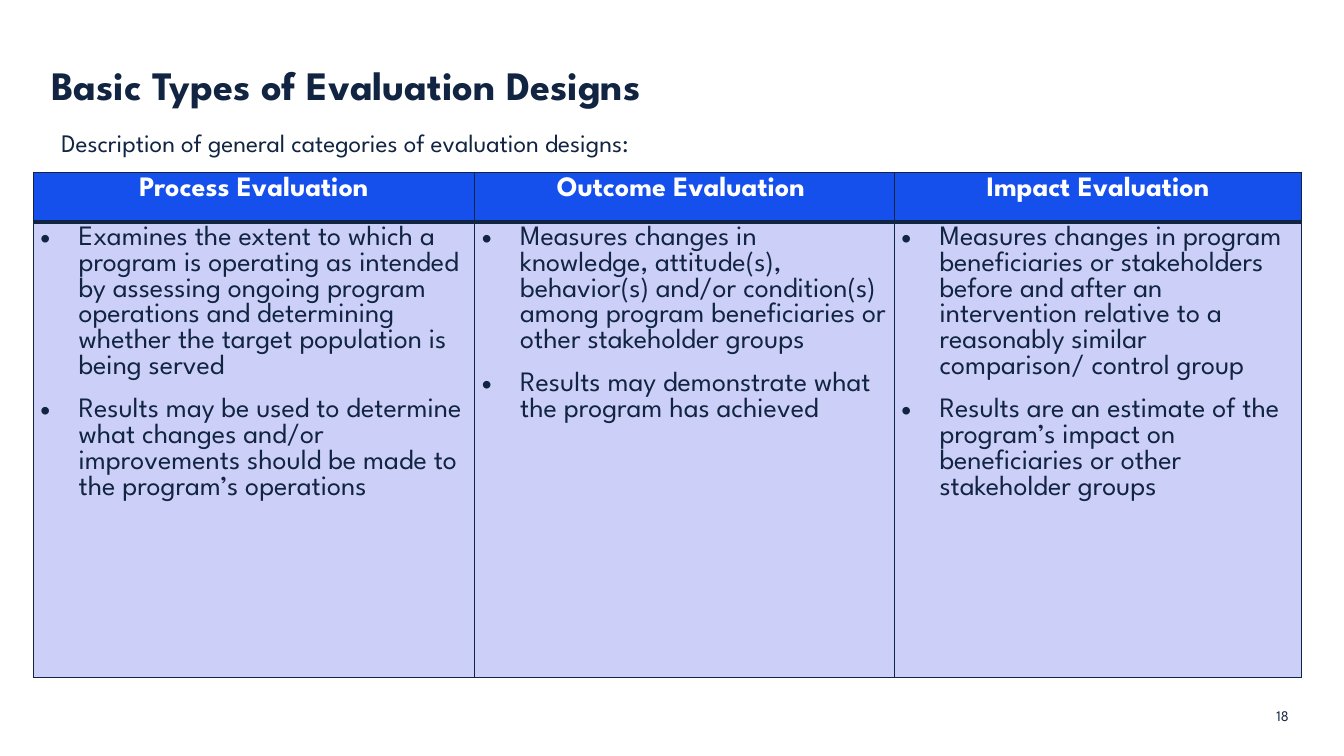
from lxml.etree import SubElement
from pptx import Presentation
from pptx.dml.color import RGBColor
from pptx.enum.text import MSO_ANCHOR, PP_ALIGN
from pptx.oxml import parse_xml
from pptx.oxml.ns import nsdecls, qn
from pptx.util import Pt

TITLE = "Basic Types of Evaluation Designs"
INTRO = "Description of general categories of evaluation designs:"
NUMBER = "18"
DESIGNS = [
    ("Process Evaluation", 438, [
        "Examines the extent to which a program is operating as intended by assessing "
        "ongoing program operations and determining whether the target population is being served",
        "Results may be used to determine what changes and/or improvements should be made "
        "to the program’s operations",
    ]),
    ("Outcome Evaluation ", 416, [
        "Measures changes in knowledge, attitude(s), behavior(s) and/or condition(s) "
        "among program beneficiaries or other stakeholder groups",
        "Results may demonstrate what the program has achieved",
    ]),
    ("Impact Evaluation", 404, [
        "Measures changes in program beneficiaries or stakeholders before and after an "
        "intervention relative to a reasonably similar comparison/ control group",
        "Results are an estimate of the program’s impact on beneficiaries or other "
        "stakeholder groups",
    ]),
]
ROWS = [49, 452]
NAVY = RGBColor(0x11, 0x24, 0x41)
BLUE = RGBColor(0x15, 0x50, 0xED)
LILAC = RGBColor(0xCC, 0xD0, 0xF8)
WHITE = RGBColor(0xFF, 0xFF, 0xFF)
FONT = "League Spartan"


def px(n):
    return n * 9144


def write(para, text, size, color=NAVY, bold=False):
    run = para.add_run()
    run.text = text
    run.font.name = FONT
    run.font.size = Pt(size)
    run.font.bold = bold
    run.font.color.rgb = color


def label(slide, box, text, size, bold=False, anchor=MSO_ANCHOR.TOP, inset=(0, 0)):
    frame = slide.shapes.add_textbox(*map(px, box)).text_frame
    frame.word_wrap = True
    frame.vertical_anchor = anchor
    frame.margin_left = frame.margin_right = px(inset[0])
    frame.margin_top = frame.margin_bottom = px(inset[1])
    para = frame.paragraphs[0]
    write(para, text, size, bold=bold)
    return para


def style(cell, fill, top, bottom):
    cell.margin_left = cell.margin_right = px(7)
    cell.margin_top = cell.margin_bottom = px(4)
    cell.fill.solid()
    cell.fill.fore_color.rgb = fill
    props = cell._tc.get_or_add_tcPr()
    sides = {"L": 1, "R": 1, "T": top, "B": bottom}
    for spot, (side, width) in enumerate(sides.items()):
        props.insert(spot, parse_xml(
            f'<a:ln{side} {nsdecls("a")} w="{Pt(width)}"><a:solidFill>'
            f'<a:srgbClr val="{NAVY}"/></a:solidFill></a:ln{side}>'))


def bullet(para):
    props = para._p.get_or_add_pPr()
    props.set("marL", str(px(38)))
    props.set("indent", str(px(-38)))
    SubElement(props, qn("a:buFont")).set("typeface", "Arial")
    SubElement(props, qn("a:buChar")).set("char", "•")
    para.space_after = Pt(12)


def main():
    deck = Presentation()
    deck.slide_width, deck.slide_height = px(1333), px(750)
    slide = deck.slides.add_slide(deck.slide_layouts[6])

    intro = label(slide, (51, 125, 1002, 46), INTRO, 18, inset=(10, 5))
    title = label(slide, (51, 62, 665, 46), TITLE, 28.8, True, MSO_ANCHOR.BOTTOM)
    intro.line_spacing = title.line_spacing = 0.9
    label(slide, (1266, 702, 26, 15), NUMBER, 10.5, anchor=MSO_ANCHOR.MIDDLE)

    wide = sum(width for _, width, _ in DESIGNS)
    table = slide.shapes.add_table(
        len(ROWS), len(DESIGNS), px(33), px(171), px(wide), px(sum(ROWS))).table
    for row, height in zip(table.rows, ROWS):
        row.height = px(height)
    for col, (name, width, points) in enumerate(DESIGNS):
        table.columns[col].width = px(width)
        head, body = table.cell(0, col), table.cell(1, col)
        style(head, BLUE, 1, 3)
        style(body, LILAC, 3, 1)
        para = head.text_frame.paragraphs[0]
        para.alignment = PP_ALIGN.CENTER
        write(para, name, 20, WHITE, True)
        frame = body.text_frame
        for spot, point in enumerate(points):
            para = frame.add_paragraph() if spot else frame.paragraphs[0]
            bullet(para)
            write(para, point, 20)

    deck.save("out.pptx")


if __name__ == "__main__":
    main()
